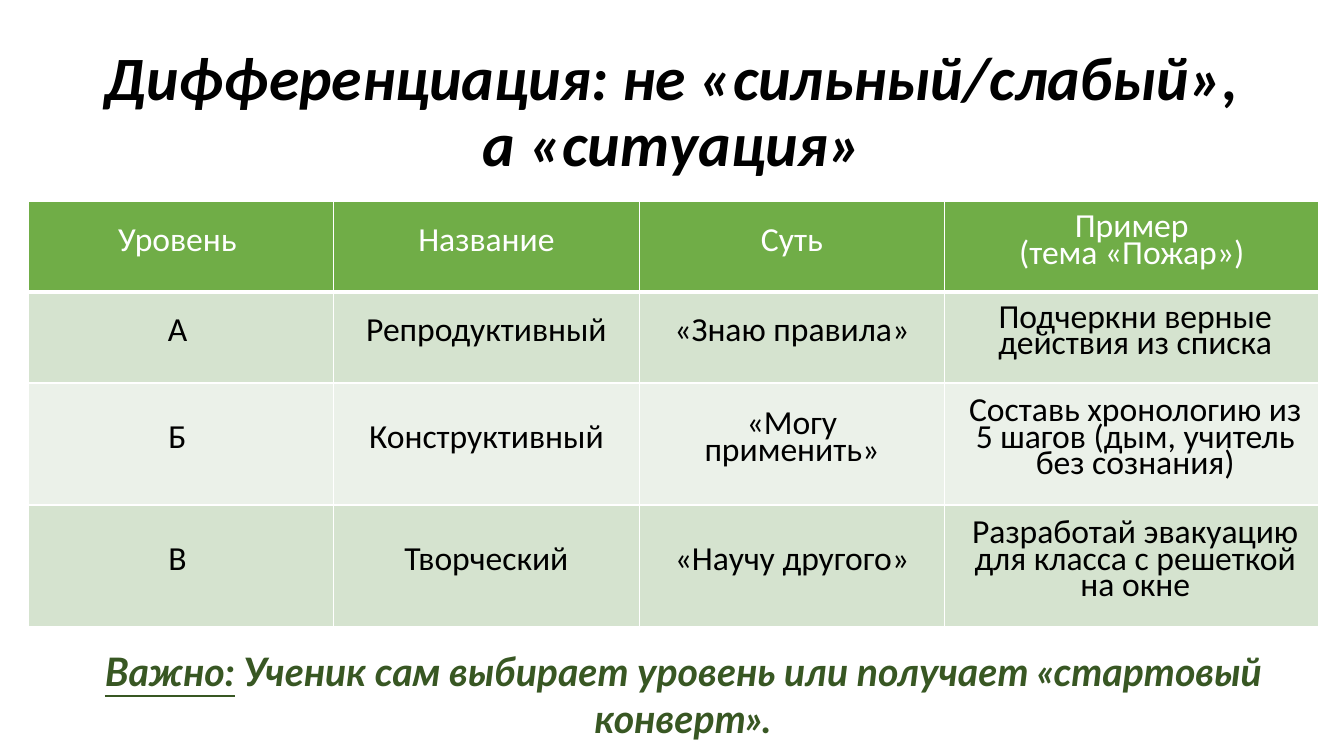
from dataclasses import dataclass

import pptx
import pptx.dml.color
import pptx.enum.text
import pptx.oxml
import pptx.oxml.ns
import pptx.util
from pptx.util import Inches


@dataclass(frozen=True)
class Theme:
    black: str = "000000"
    white: str = "FFFFFF"
    header: str = "70AD47"
    odd_row: str = "D5E3CF"
    even_row: str = "EBF1E9"
    note: str = "385723"
    title_size: int = 44
    note_size: int = 28
    table_size: int = 24
    table_leading: float = 18.8
    main_font: str = "Calibri"
    note_font: str = "Lato"


theme = Theme()


def add_text(paragraph, text, *, size, color, font=theme.main_font, bold=False,
             italic=False, underline=False, spacing=None):
    paragraph.alignment = pptx.enum.text.PP_ALIGN.CENTER
    if spacing:
        paragraph.line_spacing = spacing
    run = paragraph.add_run()
    run.text = text
    run.font.name = font
    run.font.size = pptx.util.Pt(size)
    run.font.color.rgb = pptx.dml.color.RGBColor.from_string(color)
    run.font.bold = bold
    run.font.italic = italic
    run.font.underline = underline


def set_borders(cell, bottom_width):
    """Draw white cell borders; the bottom one has its own width in points."""
    properties = cell._tc.get_or_add_tcPr()
    widths = {"lnL": 1, "lnR": 1, "lnT": 1, "lnB": bottom_width}
    for position, (side, width) in enumerate(widths.items()):
        properties.insert(position, pptx.oxml.parse_xml(
            f'<a:{side} {pptx.oxml.ns.nsdecls("a")} w="{pptx.util.Pt(width)}">'
            f'<a:solidFill><a:srgbClr val="{theme.white}"/></a:solidFill></a:{side}>'))


presentation = pptx.Presentation()
presentation.slide_width = Inches(13.33)
presentation.slide_height = Inches(7.5)
slide = presentation.slides.add_slide(presentation.slide_layouts[5])

# Title
title = slide.shapes.title
title.left, title.top = Inches(0.92), Inches(0.4)
title.width, title.height = Inches(11.5), Inches(1.45)
title.text_frame.vertical_anchor = pptx.enum.text.MSO_ANCHOR.MIDDLE
add_text(title.text_frame.paragraphs[0],
         "Дифференциация: не «сильный/слабый», а «ситуация»",
         size=theme.title_size, color=theme.black, bold=True, italic=True, spacing=0.9)

# Table of levels
levels = [
    ["Уровень", "Название", "Суть", "Пример\n(тема «Пожар»)"],
    ["А", "Репродуктивный", "«Знаю правила»", "Подчеркни верные действия из списка"],
    ["Б", "Конструктивный", "«Могу применить»",
     "Составь хронологию из 5 шагов (дым, учитель без сознания)"],
    ["В", "Творческий", "«Научу другого»",
     "Разработай эвакуацию для класса с решеткой на окне"],
]
column_widths = [3.03, 3.03, 3.03, 3.71]
row_heights = [0.9, 0.9, 1.21, 1.21]
row_fills = [theme.header, theme.odd_row, theme.even_row, theme.odd_row]
last_column = len(column_widths) - 1

table = slide.shapes.add_table(
    len(row_heights), len(column_widths), Inches(0.28), Inches(2),
    Inches(sum(column_widths)), Inches(sum(row_heights))).table
for column, width in zip(table.columns, column_widths):
    column.width = Inches(width)
for row, height in zip(table.rows, row_heights):
    row.height = Inches(height)

for row_index, row_texts in enumerate(levels):
    is_header = row_index == 0
    for column_index, text in enumerate(row_texts):
        cell = table.cell(row_index, column_index)
        cell.fill.solid()
        cell.fill.fore_color.rgb = pptx.dml.color.RGBColor.from_string(row_fills[row_index])
        cell.vertical_anchor = pptx.enum.text.MSO_ANCHOR.MIDDLE
        narrow_right = column_index == last_column and not is_header
        cell.margin_left = Inches(0.1 if column_index == 0 else 0.17)
        cell.margin_right = Inches(0.1 if narrow_right else 0.17)
        cell.margin_top = cell.margin_bottom = Inches(0.1)
        set_borders(cell, bottom_width=3 if is_header else 1)
        for line_index, line in enumerate(text.split("\n")):
            frame = cell.text_frame
            paragraph = frame.add_paragraph() if line_index else frame.paragraphs[0]
            add_text(paragraph, line, size=theme.table_size,
                     color=theme.white if is_header else theme.black,
                     spacing=pptx.util.Pt(theme.table_leading))

# Note under the table
note = slide.shapes.add_textbox(Inches(0.77), Inches(6.37), Inches(12.01), Inches(1.04))
note.text_frame.word_wrap = True
note.text_frame.auto_size = pptx.enum.text.MSO_AUTO_SIZE.SHAPE_TO_FIT_TEXT
note_parts = [
    ("Важно:", True),
    (" Ученик сам выбирает уровень или получает «стартовый конверт».", False),
]
for text, underline in note_parts:
    add_text(note.text_frame.paragraphs[0], text, size=theme.note_size, color=theme.note,
             font=theme.note_font, bold=True, italic=True, underline=underline)

presentation.save("out.pptx")
